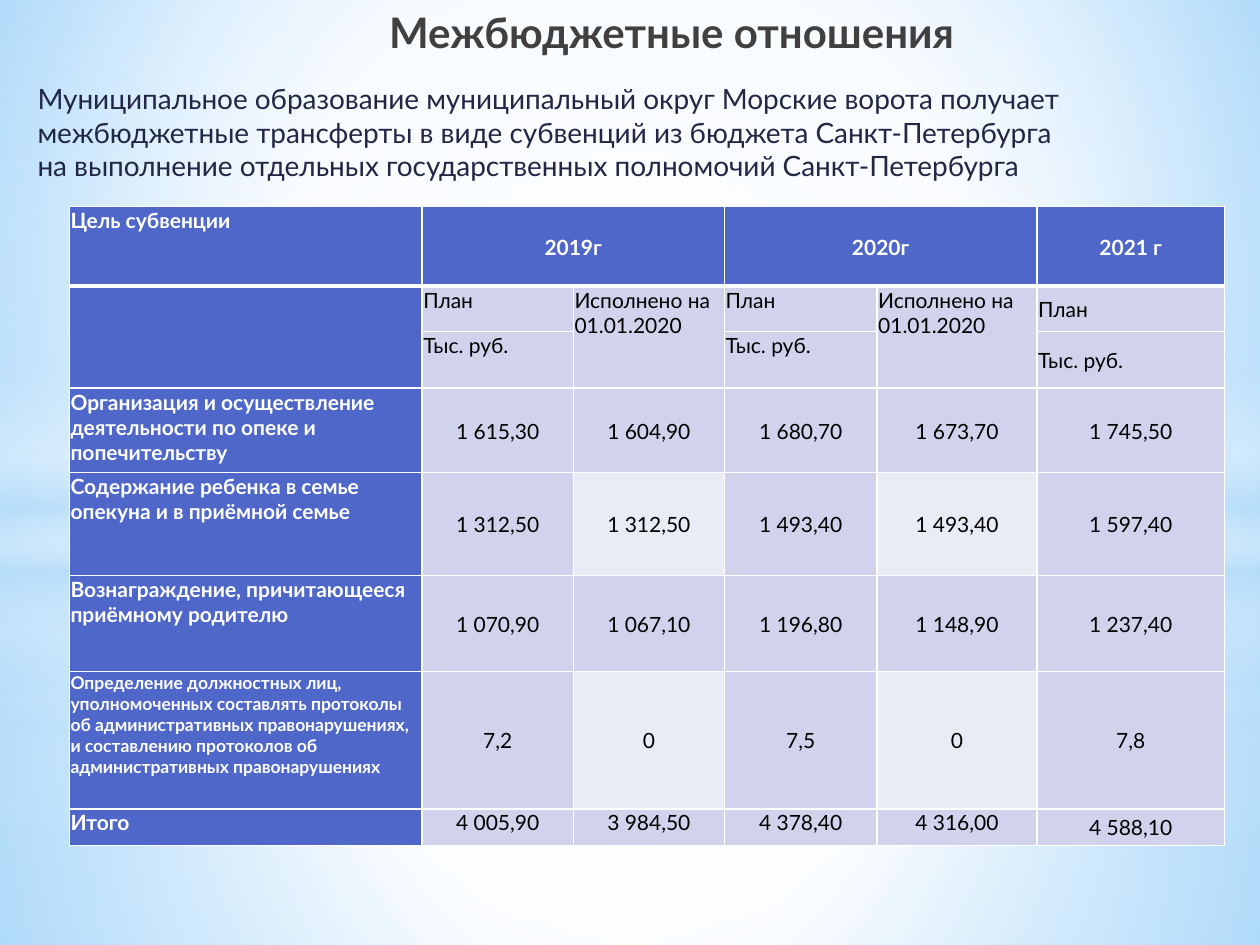
from dataclasses import dataclass
from typing import NamedTuple

from lxml import etree
from pptx import Presentation
from pptx.dml.color import RGBColor
from pptx.enum.shapes import MSO_SHAPE as Shape
from pptx.enum.text import MSO_ANCHOR as Anchor, PP_ALIGN as Align
from pptx.oxml.ns import qn
from pptx.util import Inches, Pt


@dataclass(frozen=True)
class Theme:
    font: str = "Lato"
    title: str = "404040"
    lead: str = "212745"
    header: str = "4E67C8"
    band: str = "D0D3EB"
    light: str = "E9EBF5"
    white: str = "FFFFFF"
    black: str = "000000"
    sky: str = "B4DCFA"
    title_size: int = 24
    lead_size: int = 16
    cell_size: int = 12
    small_size: int = 10


class Stop(NamedTuple):
    pos: int
    color: str
    alpha: int = 100


@dataclass(frozen=True)
class Gradient:
    stops: list[Stop]
    focus: tuple[int, int, int, int] | None = (50, 50, 50, 50)  # None: vertical


@dataclass(frozen=True)
class Layer:
    kind: Shape
    top: float
    height: float
    fill: Gradient


T = Theme()


def set_gradient(element, grad: Gradient) -> None:
    """Swap the solid fill of an element for a gradient."""
    solid = element.find(".//" + qn("a:solidFill"))
    fill = etree.Element(qn("a:gradFill"), rotWithShape="1")
    stops = etree.SubElement(fill, qn("a:gsLst"))
    for stop in grad.stops:
        gs = etree.SubElement(stops, qn("a:gs"), pos=str(stop.pos * 1000))
        color = etree.SubElement(gs, qn("a:srgbClr"), val=stop.color)
        if stop.alpha < 100:
            etree.SubElement(color, qn("a:alpha"), val=str(stop.alpha * 1000))
    if grad.focus:
        circle = etree.SubElement(fill, qn("a:path"), path="circle")
        sides = {k: str(v * 1000) for k, v in zip("ltrb", grad.focus)}
        etree.SubElement(circle, qn("a:fillToRect"), **sides)
    else:
        etree.SubElement(fill, qn("a:lin"), ang="5400000", scaled="0")
    solid.getparent().replace(solid, fill)


def glow(inner: int, mid: int, middle: int, outer: int) -> Gradient:
    return Gradient([Stop(0, T.white, inner), Stop(mid, T.white, middle),
                     Stop(100, T.sky, outer)])


def halo(edge: int) -> Gradient:
    return Gradient([Stop(0, T.white), Stop(edge, T.white, 0)])


def add_layer(s, layer: Layer) -> None:
    sp = s.shapes.add_shape(layer.kind, 0, Inches(layer.top), Inches(10), Inches(layer.height))
    sp.shadow.inherit = False
    sp.line.fill.background()
    sp.fill.solid()
    set_gradient(sp._element, layer.fill)


def style(p, size: int, color: str, bold: bool = False, align: Align = Align.LEFT) -> None:
    p.alignment = align
    p.font.name = T.font
    p.font.size = Pt(size)
    p.font.bold = bold
    p.font.color.rgb = RGBColor.from_string(color)


def add_text(s, text: str, box: tuple[float, float, float, float], **look) -> None:
    tf = s.shapes.add_textbox(*map(Inches, box)).text_frame
    tf.word_wrap = True
    p = tf.paragraphs[0]
    p.text = text
    style(p, **look)


def set_borders(cell, top: int, bottom: int) -> None:
    tc_pr = cell._tc.get_or_add_tcPr()
    widths = {"a:lnL": 1, "a:lnR": 1, "a:lnT": top, "a:lnB": bottom}
    for i, (tag, width) in enumerate(widths.items()):
        ln = etree.Element(qn(tag), w=str(Pt(width)))
        fill = etree.SubElement(ln, qn("a:solidFill"))
        etree.SubElement(fill, qn("a:srgbClr"), val=T.white)
        tc_pr.insert(i, ln)


# Table content
COLS = [2.8, 1.2, 1.2, 1.21, 1.27, 1.49]
ROWS = [0.63, 0.36, 0.45, 0.67, 0.82, 0.76, 1.09, 0.29]
DONE = "Исполнено на 01.01.2020"
UNIT = "Тыс. руб."
DATA = [
    ["Цель субвенции", "2019г", "", "2020г", "", "2021 г"],
    ["", "План", DONE, "План", DONE, "План"],
    ["", UNIT, "", UNIT, "", UNIT],
    ["Организация и осуществление деятельности по опеке и попечительству",
     "1 615,30", "1 604,90", "1 680,70", "1 673,70", "1 745,50"],
    ["Содержание ребенка в семье опекуна и в приёмной семье",
     "1 312,50", "1 312,50", "1 493,40", "1 493,40", "1 597,40"],
    ["Вознаграждение, причитающееся приёмному родителю",
     "1 070,90", "1 067,10", "1 196,80", "1 148,90", "1 237,40"],
    ["Определение должностных лиц, уполномоченных составлять протоколы об "
     "административных правонарушениях, и составлению протоколов об "
     "административных правонарушениях", "7,2", "0", "7,5", "0", "7,8"],
    ["Итого", "4 005,90", "3 984,50", "4 378,40", "4 316,00", "4 588,10"],
]
MERGES = [((0, 1), (0, 2)), ((0, 3), (0, 4)),
          ((1, 0), (2, 0)), ((1, 2), (2, 2)), ((1, 4), (2, 4))]
SUBHEADS, LIGHT_ROWS, DONE_COLS = (1, 2), (4, 6), (2, 4)
DUTY_ROW, TOTAL_ROW, LAST_COL = 6, 7, 5


def fill_cell(cell, row: int, col: int) -> None:
    is_head = row == 0 or col == 0
    is_light = row in LIGHT_ROWS and col in DONE_COLS
    is_middle = col == LAST_COL or (col > 0 and row not in (*SUBHEADS, TOTAL_ROW))
    cell.margin_left = cell.margin_right = cell.margin_top = Inches(0.01)
    cell.margin_bottom = 0
    cell.vertical_anchor = Anchor.MIDDLE if is_middle else Anchor.TOP
    cell.fill.solid()
    color = T.header if is_head else T.light if is_light else T.band
    cell.fill.fore_color.rgb = RGBColor.from_string(color)
    set_borders(cell, top=3 if row == 1 else 1, bottom=3 if row == 0 else 1)
    p = cell.text_frame.paragraphs[0]
    p.text = DATA[row][col]
    style(p, T.small_size if (row, col) == (DUTY_ROW, 0) else T.cell_size,
          T.white if is_head else T.black, is_head,
          Align.CENTER if col > 0 and row not in SUBHEADS else Align.LEFT)


def add_subsidy_table(s) -> None:
    frame = s.shapes.add_table(len(ROWS), len(COLS), Inches(0.55), Inches(1.64),
                               Inches(sum(COLS)), Inches(sum(ROWS)))
    table = frame.table
    table.first_row = table.horz_banding = False
    for column, width in zip(table.columns, COLS):
        column.width = Inches(width)
    for r, height in enumerate(ROWS):
        table.rows[r].height = Inches(height)
        for c in range(len(COLS)):
            fill_cell(table.cell(r, c), r, c)
    for first, last in MERGES:
        table.cell(*first).merge(table.cell(*last))


def main() -> None:
    prs = Presentation()
    prs.slide_width, prs.slide_height = Inches(10), Inches(7.5)
    s = prs.slides.add_slide(prs.slide_layouts[6])

    # Background and its light layers
    s.background.fill.solid()
    set_gradient(s._element.find(".//" + qn("p:bgPr")), Gradient(
        [Stop(0, "9ED5FF"), Stop(60, T.white), Stop(100, "5BB9FF")], (20, 10, 20, 60)))
    horizon = Gradient([Stop(0, T.white, 0), Stop(29, T.white, 30), Stop(45, T.sky, 40),
                        Stop(55, T.white, 26), Stop(65, T.sky, 60), Stop(100, T.white, 0)], None)
    for layer in (Layer(Shape.RECTANGLE, 5.58, 1.92, glow(91, 37, 76, 79)),
                  Layer(Shape.RECTANGLE, 0, 5.58, glow(89, 48, 62, 79)),
                  Layer(Shape.RECTANGLE, 4.12, 2.5, horizon),
                  Layer(Shape.OVAL, 1.75, 5.58, halo(56)),
                  Layer(Shape.RECTANGLE, 4.23, 3.27, glow(92, 37, 77, 80)),
                  Layer(Shape.RECTANGLE, 0, 4.23, glow(90, 48, 63, 80)),
                  Layer(Shape.RECTANGLE, 2.9, 2.5, horizon),
                  Layer(Shape.OVAL, 1.75, 5.58, halo(54))):
        add_layer(s, layer)

    # Title and lead text
    add_text(s, "Межбюджетные отношения", (1.14, 0, 6.53, 0.5),
             size=T.title_size, color=T.title, bold=True, align=Align.RIGHT)
    add_text(s, "Муниципальное образование муниципальный округ Морские ворота получает "
             "межбюджетные трансферты в виде субвенций из бюджета Санкт-Петербурга "
             "на выполнение отдельных государственных полномочий Санкт-Петербурга",
             (0.2, 0.6, 8.5, 0.95), size=T.lead_size, color=T.lead)

    add_subsidy_table(s)
    prs.save("out.pptx")


if __name__ == "__main__":
    main()
